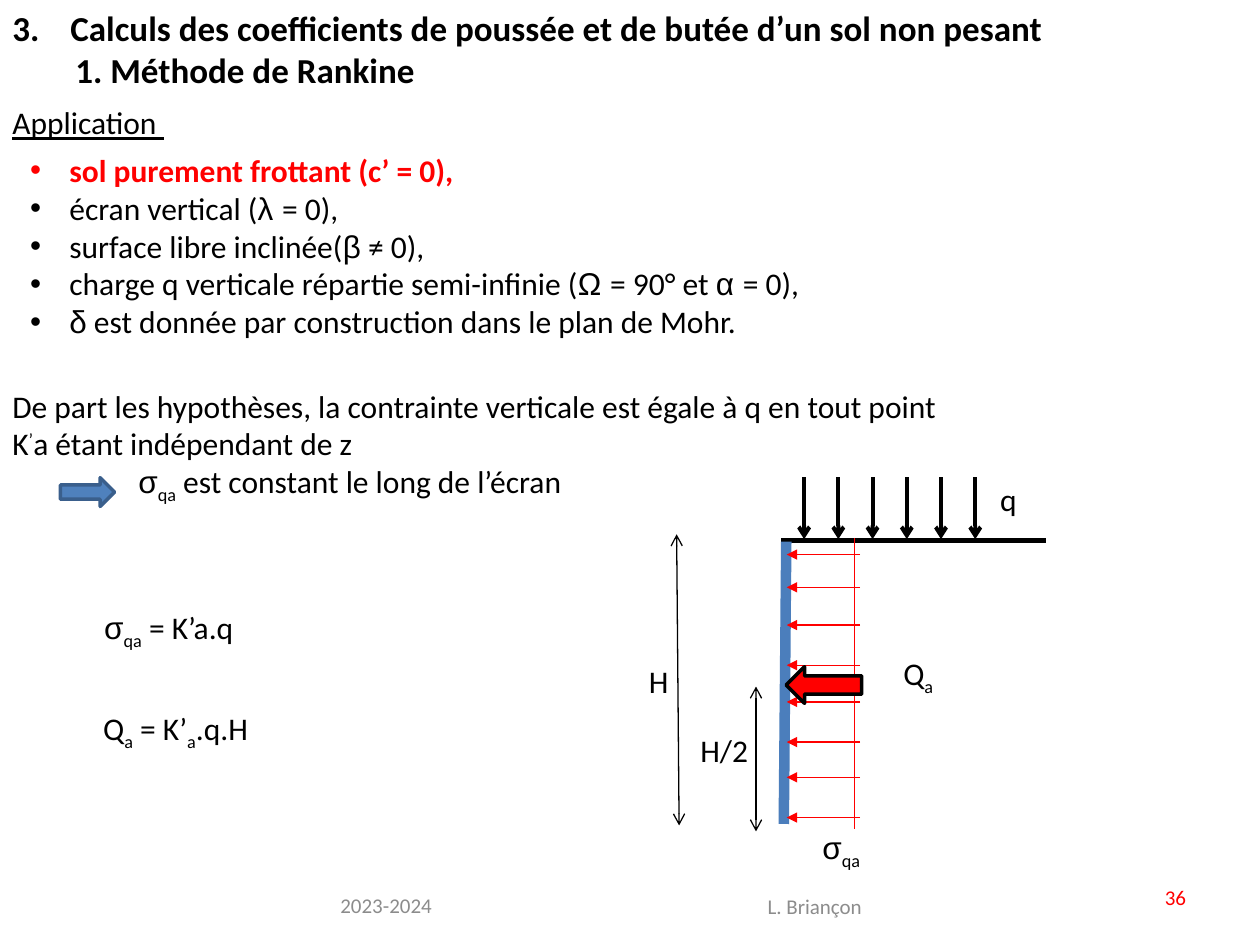
from typing import NamedTuple

from lxml.etree import SubElement
from pptx import Presentation
from pptx.dml.color import RGBColor
from pptx.enum.shapes import MSO_CONNECTOR, MSO_SHAPE
from pptx.enum.text import MSO_ANCHOR, PP_ALIGN
from pptx.oxml.ns import qn
from pptx.util import Cm, Pt

BLACK = RGBColor(0x00, 0x00, 0x00)
RED = RGBColor(0xFF, 0x00, 0x00)
GREY = RGBColor(0x8C, 0x8C, 0x8C)
BLUE = RGBColor(0x4F, 0x81, 0xBD)
DARK_BLUE = RGBColor(0x3A, 0x5F, 0x8C)
WALL_BLUE = RGBColor(0x4B, 0x7E, 0xBC)
LATIN, GREEK = "Calibri", "Arial"
SUB, SUPER = -25000, 30000


class Run(NamedTuple):
    text: str
    font: str = LATIN
    baseline: int = 0
    color: RGBColor = BLACK
    bold: bool = False
    underline: bool = False


class Para(NamedTuple):
    runs: list[Run]
    left: float = 0
    hanging: float = 0
    bullet: str = ""
    tab: float = 0


class Line(NamedTuple):
    x1: float
    y1: float
    x2: float
    y2: float
    color: RGBColor = BLACK
    width: float = 0.75
    head: str = ""
    tail: str = ""


def add_text(slide, box: tuple, paras: list[Para], size: float = 18,
             wrap: bool = False, align=PP_ALIGN.LEFT, anchor=MSO_ANCHOR.TOP) -> None:
    """Add a text box; box is left, top, width, height in cm."""
    frame = slide.shapes.add_textbox(*map(Cm, box)).text_frame
    frame.word_wrap = wrap
    frame.vertical_anchor = anchor
    for index, para in enumerate(paras):
        paragraph = frame.add_paragraph() if index else frame.paragraphs[0]
        paragraph.alignment = align
        props = paragraph._p.get_or_add_pPr()
        if para.left:
            props.set("marL", str(Cm(para.left)))
            props.set("indent", str(-Cm(para.hanging)))
        if para.bullet:
            SubElement(props, qn("a:buFont"), typeface="Arial")
            SubElement(props, qn("a:buChar"), char=para.bullet)
        if para.tab:
            tabs = SubElement(props, qn("a:tabLst"))
            SubElement(tabs, qn("a:tab"), pos=str(Cm(para.tab)), algn="l")
        for part in para.runs:
            run = paragraph.add_run()
            run.text = part.text
            run.font.name, run.font.size = part.font, Pt(size)
            run.font.bold, run.font.underline = part.bold, part.underline
            run.font.color.rgb = part.color
            if part.baseline:
                run._r.get_or_add_rPr().set("baseline", str(part.baseline))


def add_line(slide, line: Line) -> None:
    connector = slide.shapes.add_connector(
        MSO_CONNECTOR.STRAIGHT, Cm(line.x1), Cm(line.y1), Cm(line.x2), Cm(line.y2))
    connector.line.color.rgb = line.color
    connector.line.width = Pt(line.width)
    outline = connector.line._get_or_add_ln()
    for tag, kind in (("a:headEnd", line.head), ("a:tailEnd", line.tail)):
        if kind:
            SubElement(outline, qn(tag), type=kind)
    SubElement(connector._element.spPr, qn("a:effectLst"))


def add_block_arrow(slide, kind, box: tuple, fill: RGBColor, edge: RGBColor) -> None:
    arrow = slide.shapes.add_shape(kind, *map(Cm, box))
    arrow.shadow.inherit = False
    arrow.fill.solid()
    arrow.fill.fore_color.rgb = fill
    arrow.line.color.rgb = edge
    arrow.line.width = Pt(2)


def add_headings(slide) -> None:
    add_text(slide, (0, 0, 21.51, 1.96), [
        Para([Run("3.\tCalculs des coefficients de poussée et de butée d’un sol non pesant",
                  bold=True)], tab=1.17),
        Para([Run("1. Méthode de Rankine", bold=True)], left=1.27),
    ], size=20)
    add_text(slide, (0, 1.96, 3.61, 1.02), [Para([Run("Application ", underline=True)])])


def add_reasoning(slide) -> None:
    # Hypotheses
    hypotheses = [
        [Run("sol purement frottant (c’ = 0),", color=RED, bold=True)],
        [Run("écran vertical ("), Run("λ ", GREEK), Run("= 0),")],
        [Run("surface libre inclinée("), Run("β", GREEK), Run(" ≠ 0),")],
        [Run("charge q verticale répartie semi-infinie ("), Run("Ω ", GREEK),
         Run("= 90° et "), Run("α ", GREEK), Run("= 0),")],
        [Run("δ", GREEK), Run(" est donnée par construction dans le plan de Mohr.")],
    ]
    add_text(slide, (0.36, 2.92, 18.31, 4.11),
             [Para(runs, left=0.79, hanging=0.79, bullet="•") for runs in hypotheses],
             wrap=True)

    # Consequence
    sigma_qa = [Run("σ", GREEK), Run("qa", baseline=SUB)]
    add_text(slide, (0, 7.67, 19.38, 2.57), [
        Para([Run("De part les hypothèses, la contrainte verticale est égale à q en tout point")]),
        Para([Run("K"), Run("’", baseline=SUPER), Run("a étant indépendant de z")]),
        Para([*sigma_qa, Run(" est constant le long de l’écran")], left=2.54),
    ])
    add_block_arrow(slide, MSO_SHAPE.RIGHT_ARROW, (1.22, 9.63, 1.09, 0.58), BLUE, DARK_BLUE)

    # Formulas
    add_text(slide, (1.85, 12.14, 3.35, 1.02), [Para([*sigma_qa, Run(" = K’a.q")])])
    add_text(slide, (1.83, 14.17, 3.51, 1.02), [
        Para([Run("Q"), Run("a", baseline=SUB), Run(" = K’"),
              Run("a", baseline=SUB), Run(".q.H")])])


def add_diagram(slide) -> None:
    # Ground surface, wall and limit of the pressure
    add_line(slide, Line(15.75, 10.9, 21.08, 10.9, width=3))
    add_line(slide, Line(15.85, 10.92, 15.8, 16.61, WALL_BLUE, 6))
    add_line(slide, Line(17.22, 10.85, 17.22, 16.71, RED))

    # Surface load
    for index in range(6):
        x = 16.21 + 0.69 * index
        add_line(slide, Line(x, 9.62, x, 10.87, width=2.25, tail="arrow"))

    # Pressure on the wall and its resultant
    for y in (11.18, 11.84, 12.6, 13.41, 14.15, 14.96, 15.67, 16.48):
        add_line(slide, Line(17.34, y, 15.86, y, RED, tail="triangle"))
    add_block_arrow(slide, MSO_SHAPE.LEFT_ARROW, (15.85, 13.44, 1.52, 0.74), RED, BLACK)

    # Heights
    add_line(slide, Line(13.64, 10.77, 13.69, 16.64, head="arrow", tail="arrow"))
    add_line(slide, Line(15.24, 13.84, 15.24, 16.76, head="arrow", tail="arrow"))

    # Labels
    labels = [
        (19.91, 9.55, 0.97, [Run("q")]),
        (17.96, 13.06, 1.14, [Run("Q"), Run("a", baseline=SUB)]),
        (12.83, 13.23, 0.91, [Run("H")]),
        (13.87, 14.61, 1.5, [Run("H/2")]),
        (16.33, 16.56, 1.32, [Run("σ", GREEK), Run("qa", baseline=SUB)]),
    ]
    for left, top, width, runs in labels:
        add_text(slide, (left, top, width, 1.02), [Para(runs)])


def add_footer(slide) -> None:
    footer = [
        ((1.6, 17.73, 10.39, 1.02), "2023-2024", GREY, PP_ALIGN.CENTER, 1.98),
        ((12.4, 17.75, 8.05, 1.02), "L. Briançon", GREY, PP_ALIGN.CENTER, 0),
        ((18.24, 17.58, 5.92, 1.02), "36", RED, PP_ALIGN.RIGHT, 0),
    ]
    for box, text, color, align, left in footer:
        add_text(slide, box, [Para([Run(text, color=color)], left=left)], size=12,
                 wrap=True, align=align, anchor=MSO_ANCHOR.MIDDLE)


def main() -> None:
    deck = Presentation()
    deck.slide_width, deck.slide_height = Cm(25.4), Cm(19.05)
    slide = deck.slides.add_slide(deck.slide_layouts[6])
    add_headings(slide)
    add_reasoning(slide)
    add_diagram(slide)
    add_footer(slide)
    deck.save("out.pptx")


if __name__ == "__main__":
    main()
